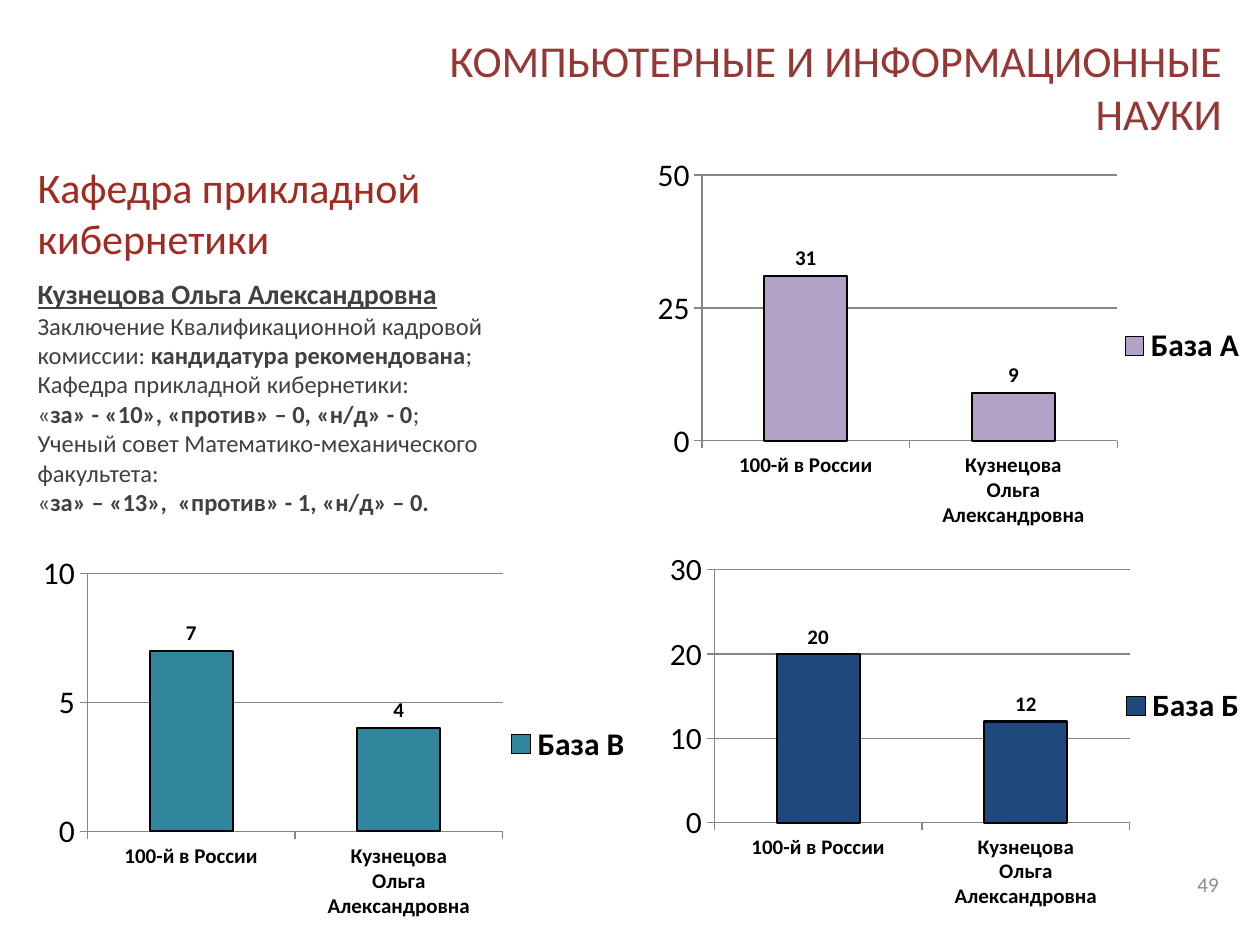
"""Build a slide comparing a candidate's citation indices for the applied cybernetics chair."""
from lxml import etree
from pptx import Presentation
from pptx.chart.data import CategoryChartData
from pptx.dml.color import RGBColor
from pptx.enum.chart import XL_CHART_TYPE as ChartType, XL_LABEL_POSITION as LabelPosition
from pptx.enum.chart import XL_LEGEND_POSITION as LegendPosition, XL_TICK_MARK as TickMark
from pptx.enum.text import MSO_ANCHOR as Anchor, MSO_AUTO_SIZE as AutoSize, PP_ALIGN as Align
from pptx.oxml.ns import qn
from pptx.util import Cm, Pt


def color(hex_string):
    return RGBColor.from_string(hex_string)


def write(shape, place, paragraphs, size, hex_string, align=Align.LEFT, anchor=Anchor.MIDDLE):
    shape.left, shape.top, shape.width, shape.height = [Cm(length) for length in place]
    frame = shape.text_frame
    frame.word_wrap = True
    frame.auto_size = AutoSize.NONE
    frame.vertical_anchor = anchor
    for index, pieces in enumerate(paragraphs):
        para = frame.add_paragraph() if index else frame.paragraphs[0]
        para.alignment = align
        for text, bold in pieces:
            span = para.add_run()
            span.text = text
            span.font.name = "Calibri"
            span.font.size = Pt(size)
            span.font.bold = bold
            span.font.color.rgb = color(hex_string)
    return frame


deck = Presentation()
deck.slide_width, deck.slide_height = Cm(25.4), Cm(19.05)
page = deck.slides.add_slide(deck.slide_layouts[5])
shapes = page.shapes

write(shapes.title, (6.5, 0.76, 18.39, 1.96),
      [[("КОМПЬЮТЕРНЫЕ И ИНФОРМАЦИОННЫЕ НАУКИ", False)]], 25.2, "953735", Align.RIGHT)

categories = ["100-й в России", "Кузнецова\nОльга Александровна"]
charts = [
    ("База Б", (20, 12), "1F497D", (12.9, 10.31), 30, 10, (0.117, 0.15, 0.668, 0.648)),
    ("База А", (31, 9), "B3A2C7", (12.9, 2.97), 50, 25, (0.103, 0.071, 0.673, 0.673)),
    ("База В", (7, 4), "31859C", (0.51, 11), 10, 5, (0.103, 0.075, 0.667, 0.648)),
]
for name, values, fill, (left, top), maximum, step, plot_area in charts:
    data = CategoryChartData()
    data.categories = categories
    data.add_series(name, values)
    chart = shapes.add_chart(ChartType.COLUMN_CLUSTERED, Cm(left), Cm(top),
                             Cm(12.5), Cm(8), data).chart
    chart.has_title = False
    chart.font.name = "Calibri"
    chart.font.size = Pt(18)
    chart.font.color.rgb = color("000000")

    chart.has_legend = True
    chart.legend.position = LegendPosition.RIGHT
    chart.legend.include_in_layout = False
    chart.legend.font.bold = True

    value_axis, category_axis = chart.value_axis, chart.category_axis
    value_axis.minimum_scale = 0
    value_axis.maximum_scale = maximum
    value_axis.major_unit = step
    category_axis.tick_labels.font.size = Pt(12)
    category_axis.tick_labels.font.bold = True
    for axis in (value_axis, category_axis):
        axis.major_tick_mark = TickMark.OUTSIDE
    for line in (value_axis.format.line, category_axis.format.line,
                 value_axis.major_gridlines.format.line):
        line.color.rgb = color("868686")
        line.width = Pt(0.75)

    plot = chart.plots[0]
    plot.gap_width = 150
    plot.vary_by_categories = False
    plot.has_data_labels = True
    labels = plot.data_labels
    labels.show_value = True
    labels.position = LabelPosition.OUTSIDE_END
    labels.font.size = Pt(12)
    labels.font.bold = True
    series = plot.series[0]
    series.format.fill.solid()
    series.format.fill.fore_color.rgb = color(fill)
    series.format.line.color.rgb = color("000000")
    series.format.line.width = Pt(1.25)

    area = chart.element.find(".//" + qn("c:plotArea"))
    for old_layout in area.findall(qn("c:layout")):
        area.remove(old_layout)
    layout = etree.Element(qn("c:layout"))
    area.insert(0, layout)
    manual = etree.SubElement(layout, qn("c:manualLayout"))
    settings = [("layoutTarget", "inner"), ("xMode", "edge"), ("yMode", "edge")]
    for tag, setting in settings + list(zip("xywh", plot_area)):
        etree.SubElement(manual, qn("c:" + tag)).set("val", f"{setting:.2f}" if tag in "xywh" else setting)

write(shapes.add_textbox(0, 0, 0, 0), (18.9, 17.32, 5.92, 1.02),
      [[("49", False)]], 12, "8C8C8C", Align.RIGHT)
write(shapes.add_textbox(0, 0, 0, 0), (0.51, 3.12, 10.8, 2.31),
      [[("Кафедра прикладной кибернетики", False)]], 24, "9F2B22")

decision = [
    [("Кузнецова Ольга Александровна", True)],
    [("Заключение Квалификационной кадровой комиссии: ", False),
     ("кандидатура рекомендована", True), (";", False)],
    [("Кафедра прикладной кибернетики:", False)],
    [("«", False), ("за» - «10», «против» – 0, «н/д» - 0", True), (";", False)],
    [("Ученый совет Математико-механического факультета:", False)],
    [("«", False), ("за» – «13»,  «против» - 1, «н/д» – 0.", True)],
]
frame = write(shapes.add_textbox(0, 0, 0, 0), (0.51, 5.46, 11.61, 5.13),
              decision, 14, "404040", anchor=Anchor.TOP)
frame.paragraphs[0].alignment = Align.JUSTIFY
candidate = frame.paragraphs[0].runs[0].font
candidate.size = Pt(16)
candidate.underline = True

deck.save("out.pptx")
